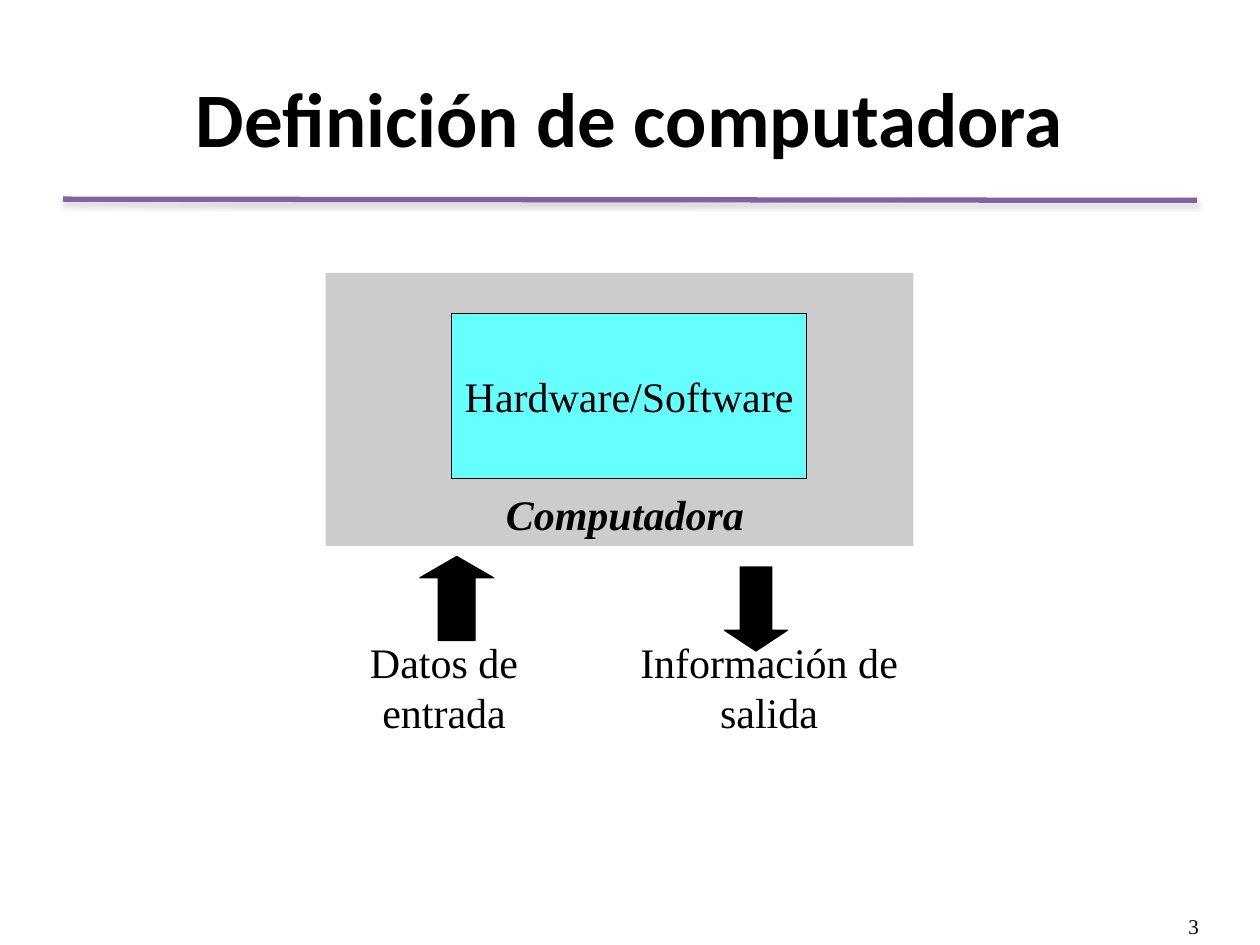
from lxml.etree import SubElement
from pptx import Presentation
from pptx.dml.color import RGBColor
from pptx.enum.shapes import MSO_CONNECTOR, MSO_SHAPE
from pptx.enum.text import MSO_ANCHOR, PP_ALIGN
from pptx.oxml.ns import qn
from pptx.util import Pt

COLORS = {
    "text": "000000",
    "rule": "8064A2",
    "shadow": "808080",
    "computer": "CCCCCC",
    "core": "66FFFF",
}
SERIF = "Times New Roman"


def color(name):
    """Return the named colour."""
    return RGBColor.from_string(COLORS[name])


def write(shape, lines, size=24, font=SERIF, align=PP_ALIGN.CENTER,
          bold=False, italic=False, anchor=MSO_ANCHOR.TOP, wrap=False):
    """Write one paragraph per line into a shape."""
    frame = shape.text_frame
    frame.word_wrap = wrap
    frame.vertical_anchor = anchor
    frame.text = "\n".join(lines)
    for paragraph in frame.paragraphs:
        paragraph.alignment = align
        paragraph.font.name = font
        paragraph.font.size = Pt(size)
        paragraph.font.bold = bold
        paragraph.font.italic = italic
        paragraph.font.color.rgb = color("text")


def add_label(shapes, left, top, width, height, lines, **style):
    """Add a text box with the given lines."""
    box = shapes.add_textbox(Pt(left), Pt(top), Pt(width), Pt(height))
    write(box, lines, **style)


def add_block(shapes, kind, left, top, width, height, fill, outlined=True):
    """Add a flat filled shape, with or without a thin outline."""
    shape = shapes.add_shape(kind, Pt(left), Pt(top), Pt(width), Pt(height))
    shape.shadow.inherit = False
    shape.fill.solid()
    shape.fill.fore_color.rgb = color(fill)
    if outlined:
        shape.line.color.rgb = color("text")
        shape.line.width = Pt(0.75)
    else:
        shape.line.fill.background()
    return shape


def add_shadow(connector):
    """Give a connector a soft shadow straight below it."""
    effects = SubElement(connector._element.spPr, qn("a:effectLst"))
    shadow = SubElement(effects, qn("a:outerShdw"), blurRad=str(Pt(3.1)),
                        dist=str(Pt(1.8)), dir="5400000", rotWithShape="0")
    tint = SubElement(shadow, qn("a:srgbClr"), val=COLORS["shadow"])
    SubElement(tint, qn("a:alpha"), val="35000")


def add_header(slide, left, top, width, height):
    """Place the title and the shadowed rule below it."""
    rule_top = top + height + 2.2
    rule = slide.shapes.add_connector(
        MSO_CONNECTOR.STRAIGHT, Pt(left), Pt(rule_top),
        Pt(left + width), Pt(rule_top + 0.7))
    rule.line.color.rgb = color("rule")
    rule.line.width = Pt(3)
    add_shadow(rule)
    add_label(slide.shapes, left, top, width, height,
              ["Definición de computadora"], size=44, font="Calibri",
              bold=True, anchor=MSO_ANCHOR.MIDDLE, wrap=True)


def add_diagram(slide, left, top, width, height):
    """Place the computer block with its input and output below."""
    shapes = slide.shapes.add_group_shape().shapes
    add_block(shapes, MSO_SHAPE.RECTANGLE, left, top, width, 156,
              "computer", outlined=False)
    core = add_block(shapes, MSO_SHAPE.RECTANGLE, left + 72, top + 23,
                     203, 94.5, "core")
    write(core, ["Hardware/Software"], anchor=MSO_ANCHOR.MIDDLE)
    add_label(shapes, left + 96, top + 119.5, 160, 36.7, ["Computadora"],
              align=PP_ALIGN.LEFT, bold=True, italic=True)

    label_height = 65
    label_top = top + height - label_height
    for offset, label_width, lines in (
            (18, 99.5, ["Datos de", "entrada"]),
            (172.5, 162, ["Información de", "salida"])):
        add_label(shapes, left + offset, label_top, label_width,
                  label_height, lines)
    for kind, x, y, arrow_width, head in (
            (MSO_SHAPE.UP_ARROW, 54, 162, 42, 0.29),
            (MSO_SHAPE.DOWN_ARROW, 228, 168, 36, 0.33)):
        arrow = add_block(shapes, kind, left + x, top + y,
                          arrow_width, 48, "text")
        arrow.adjustments[0] = 0.5
        arrow.adjustments[1] = head


def add_page_number(slide, left, top, width, height):
    """Place the page number."""
    add_label(slide.shapes, left, top, width, height, ["3"], size=12,
              align=PP_ALIGN.LEFT)


def main():
    """Build and save the slide."""
    presentation = Presentation()
    presentation.slide_width = Pt(720)
    presentation.slide_height = Pt(540)
    slide = presentation.slides.add_slide(presentation.slide_layouts[6])
    add_header(slide, 36, 21.6, 648, 90)
    add_diagram(slide, 186, 156, 336, 269)
    add_page_number(slide, 672, 518.4, 20, 21.6)
    presentation.save("out.pptx")


if __name__ == "__main__":
    main()
